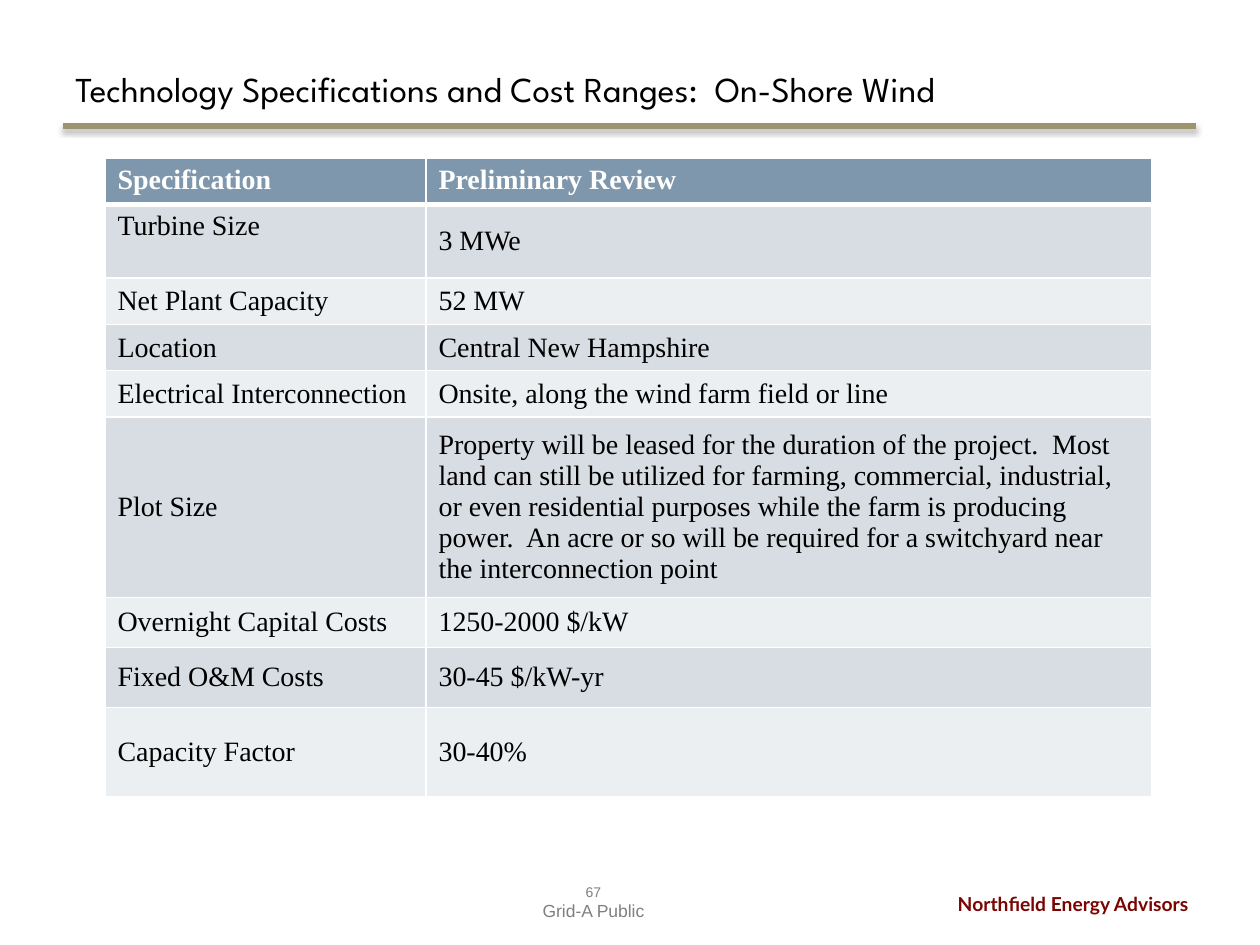
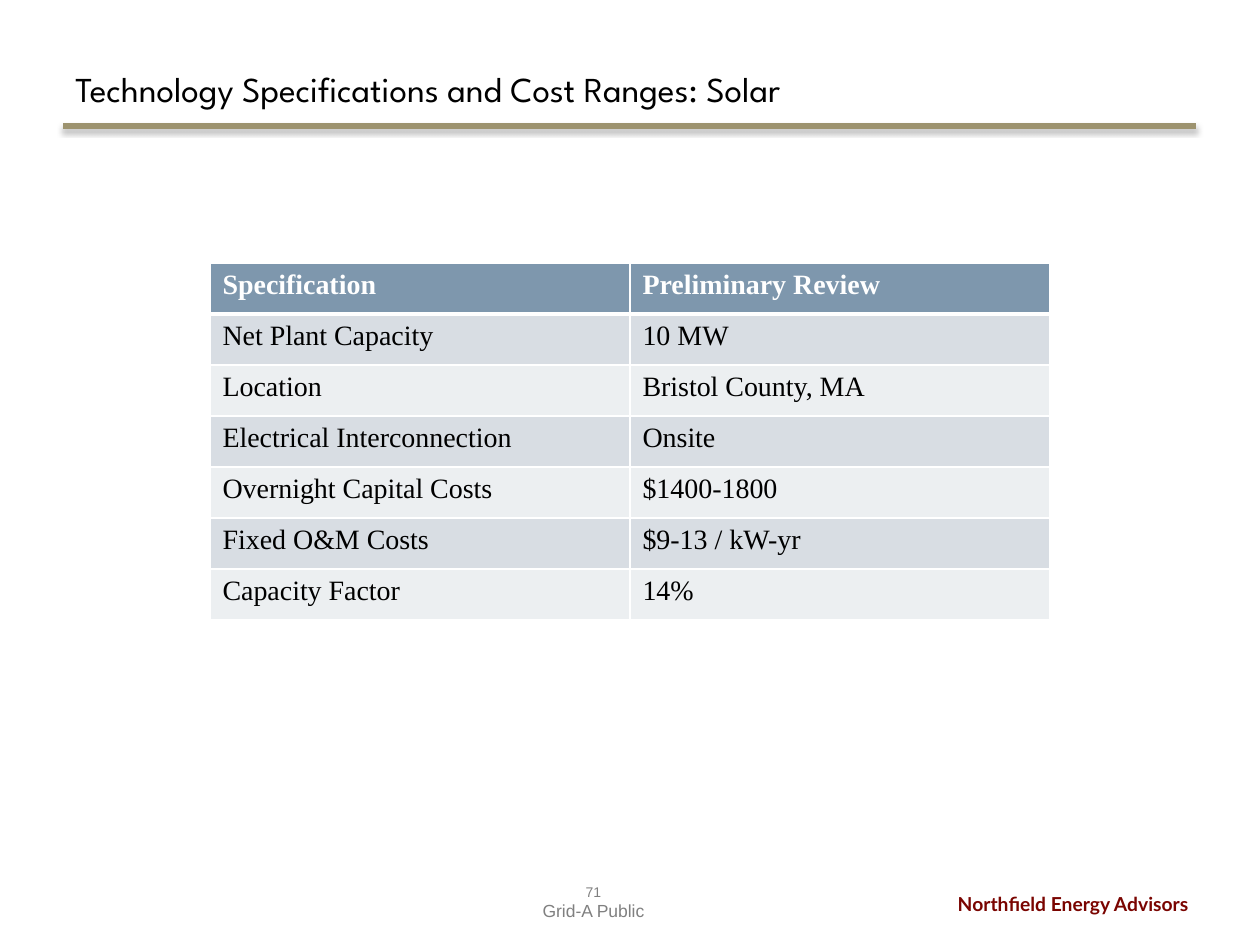
from lxml import etree
from pptx import Presentation
from pptx.dml.color import RGBColor
from pptx.enum.shapes import MSO_CONNECTOR as Connector
from pptx.enum.text import MSO_ANCHOR as Anchor, PP_ALIGN as Align
from pptx.oxml.ns import qn
from pptx.util import Emu, Inches, Pt

PX_PER_INCH = 126
COLORS = {
    "rule": "9D936F", "firm": "7A0400", "footer": "808080", "ink": "000000",
    "white": "FFFFFF", "header": "7E97AD", "band": "D8DDE3", "light": "ECEFF1",
}
FORMATS = {
    "title": {"name": "League Spartan", "size": Pt(20), "color": "ink"},
    "firm": {"name": "Lato", "size": Pt(11), "bold": True, "color": "firm"},
    "page": {"name": "Arial", "size": Pt(8), "color": "footer"},
    "notice": {"name": "Arial", "size": Pt(10), "color": "footer"},
    "header": {"name": "Times New Roman", "size": Pt(16), "bold": True, "color": "white"},
    "body": {"name": "Times New Roman", "size": Pt(16), "bold": False, "color": "ink"},
}
HEADINGS = ("Specification", "Preliminary Review")

WIND_SPECS = [
    ("Turbine Size", "3 MWe"),
    ("Net Plant Capacity", "52 MW"),
    ("Location", "Central New Hampshire"),
    ("Electrical Interconnection", "Onsite, along the wind farm field or line"),
    ("Plot Size",
     "Property will be leased for the duration of the project.  Most land can still be "
     "utilized for farming, commercial, industrial, or even residential purposes while "
     "the farm is producing power.  An acre or so will be required for a switchyard near "
     "the interconnection point"),
    ("Overnight Capital Costs", "1250-2000 $/kW"),
    ("Fixed O&M Costs", "30-45 $/kW-yr"),
    ("Capacity Factor", "30-40%"),
]
SOLAR_SPECS = [
    ("Net Plant Capacity", "10 MW"),
    ("Location", "Bristol County, MA"),
    ("Electrical Interconnection", "Onsite"),
    ("Overnight Capital Costs", "$1400-1800"),
    ("Fixed O&M Costs", "$9-13 / kW-yr"),
    ("Capacity Factor", "14%"),
]


def px(length):
    return Emu(round(length * Inches(1) / PX_PER_INCH))


def rgb(color):
    return RGBColor.from_string(COLORS[color])


def add_color(parent, color):
    fill = etree.SubElement(parent, qn("a:solidFill"))
    return etree.SubElement(fill, qn("a:srgbClr"), val=COLORS[color])


class Deck:
    def __init__(self):
        self.presentation = Presentation()
        self.presentation.slide_width = px(1260)
        self.presentation.slide_height = px(945)
        self.slide = None

    def start_slide(self, title, page):
        """Add a slide with the shared rule, footers and title."""
        self.slide = self.presentation.slides.add_slide(self.presentation.slide_layouts[6])
        self.rule(63, 1196, 126)
        self.text((730, 886, 471, 37), [("Northfield Energy Advisors", "firm")], Align.RIGHT)
        self.text((431, 877, 325, 38), [(page, "page"), ("Grid-A Public", "notice")],
                  Align.CENTER)
        self.text((63, 38, 1134, 78), [(title, "title")], anchor=Anchor.BOTTOM)

    def style(self, paragraph, style):
        for attribute, value in FORMATS[style].items():
            if attribute == "color":
                paragraph.font.color.rgb = rgb(value)
            else:
                setattr(paragraph.font, attribute, value)

    def rule(self, left, right, y):
        rule = self.slide.shapes.add_connector(
            Connector.STRAIGHT, px(left), px(y), px(right), px(y))
        rule.line.color.rgb = rgb("rule")
        rule.line.width = Pt(3)
        effects = etree.SubElement(rule._element.spPr, qn("a:effectLst"))
        shadow = etree.SubElement(
            effects, qn("a:outerShdw"), blurRad=str(Pt(3.1)), dist=str(Pt(1.8)),
            dir="5400000", rotWithShape="0")
        shade = etree.SubElement(shadow, qn("a:srgbClr"), val=COLORS["ink"])
        etree.SubElement(shade, qn("a:alpha"), val="35000")

    def text(self, box, lines, align=Align.LEFT, anchor=Anchor.TOP):
        frame = self.slide.shapes.add_textbox(*map(px, box)).text_frame
        frame.word_wrap = True
        frame.vertical_anchor = anchor
        for index, (words, style) in enumerate(lines):
            paragraph = frame.add_paragraph() if index else frame.paragraphs[0]
            paragraph.text = words
            paragraph.alignment = align
            self.style(paragraph, style)

    def borders(self, cell, row):
        """Draw white cell borders, thicker below the header row."""
        widths = {"L": 1, "R": 1, "T": 3 if row == 1 else 1, "B": 3 if row == 0 else 1}
        for side, width in widths.items():
            border = etree.SubElement(
                cell._tc.get_or_add_tcPr(), qn(f"a:ln{side}"), w=str(Pt(width)))
            add_color(border, "white")

    def spec_table(self, left, top, widths, heights, specs, anchor=Anchor.TOP):
        table = self.slide.shapes.add_table(
            len(heights), len(widths), px(left), px(top),
            px(sum(widths)), px(sum(heights))).table
        for column, width in zip(table.columns, widths):
            column.width = px(width)
        for row, (height, entries) in enumerate(zip(heights, [HEADINGS, *specs])):
            table.rows[row].height = px(height)
            fill = "header" if row == 0 else "band" if row % 2 else "light"
            for column, words in enumerate(entries):
                cell = table.cell(row, column)
                cell.text = words
                cell.vertical_anchor = anchor if row else Anchor.TOP
                self.style(cell.text_frame.paragraphs[0], "body" if row else "header")
                self.borders(cell, row)
                cell.fill.solid()
                cell.fill.fore_color.rgb = rgb(fill)
        return table


def main():
    deck = Deck()

    deck.start_slide("Technology Specifications and Cost Ranges:  On-Shore Wind", "67")
    wind = deck.spec_table(105, 158, (321, 726), (44, 74, 44, 44, 44, 168, 50, 60, 89),
                           WIND_SPECS, Anchor.MIDDLE)
    turbine_label = wind.cell(1, 0)
    turbine_label.vertical_anchor = Anchor.TOP

    deck.start_slide("Technology Specifications and Cost Ranges: Solar", "71")
    deck.spec_table(210, 263, (420, 420), [51] * 7, SOLAR_SPECS)

    deck.presentation.save("out.pptx")


if __name__ == "__main__":
    main()
